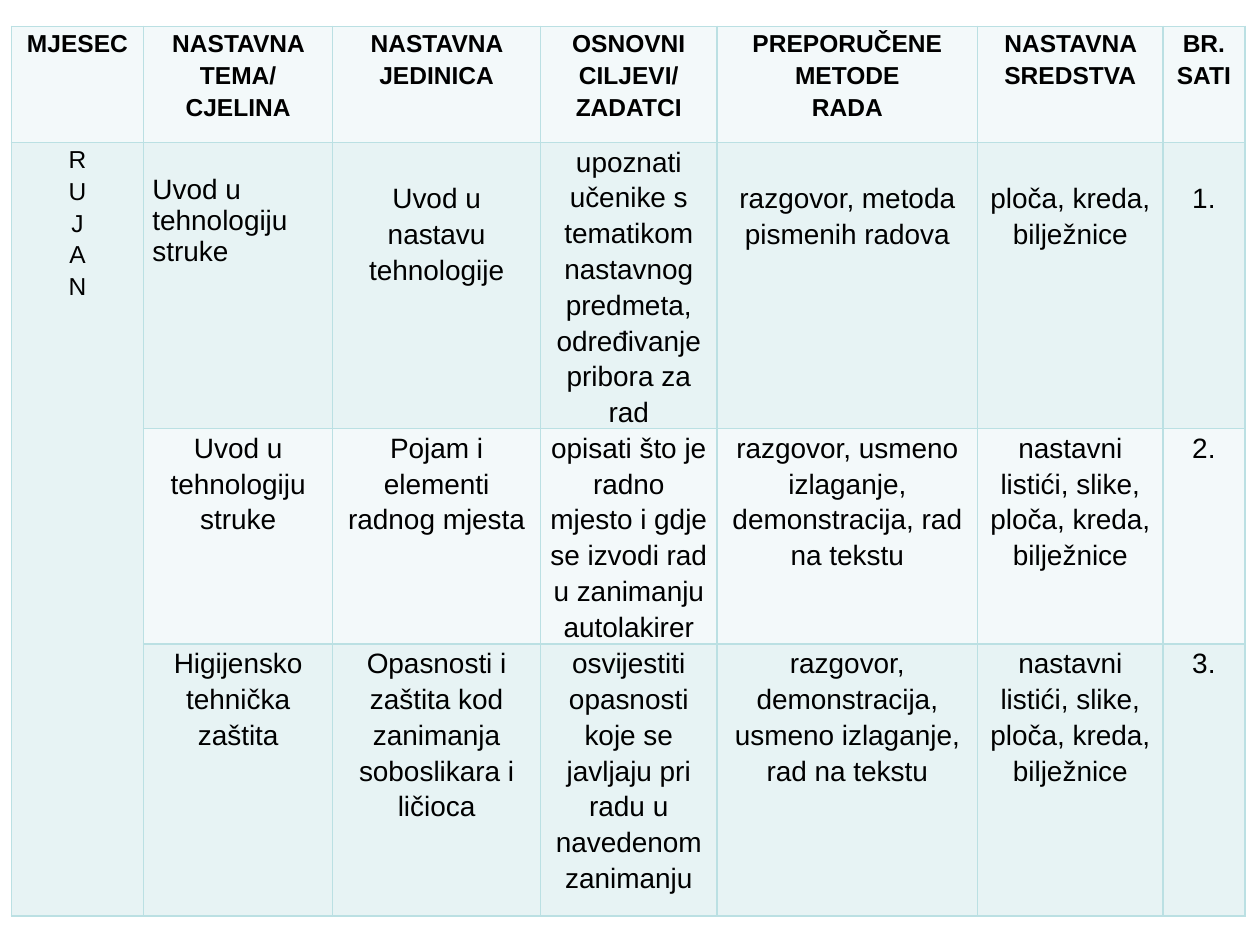
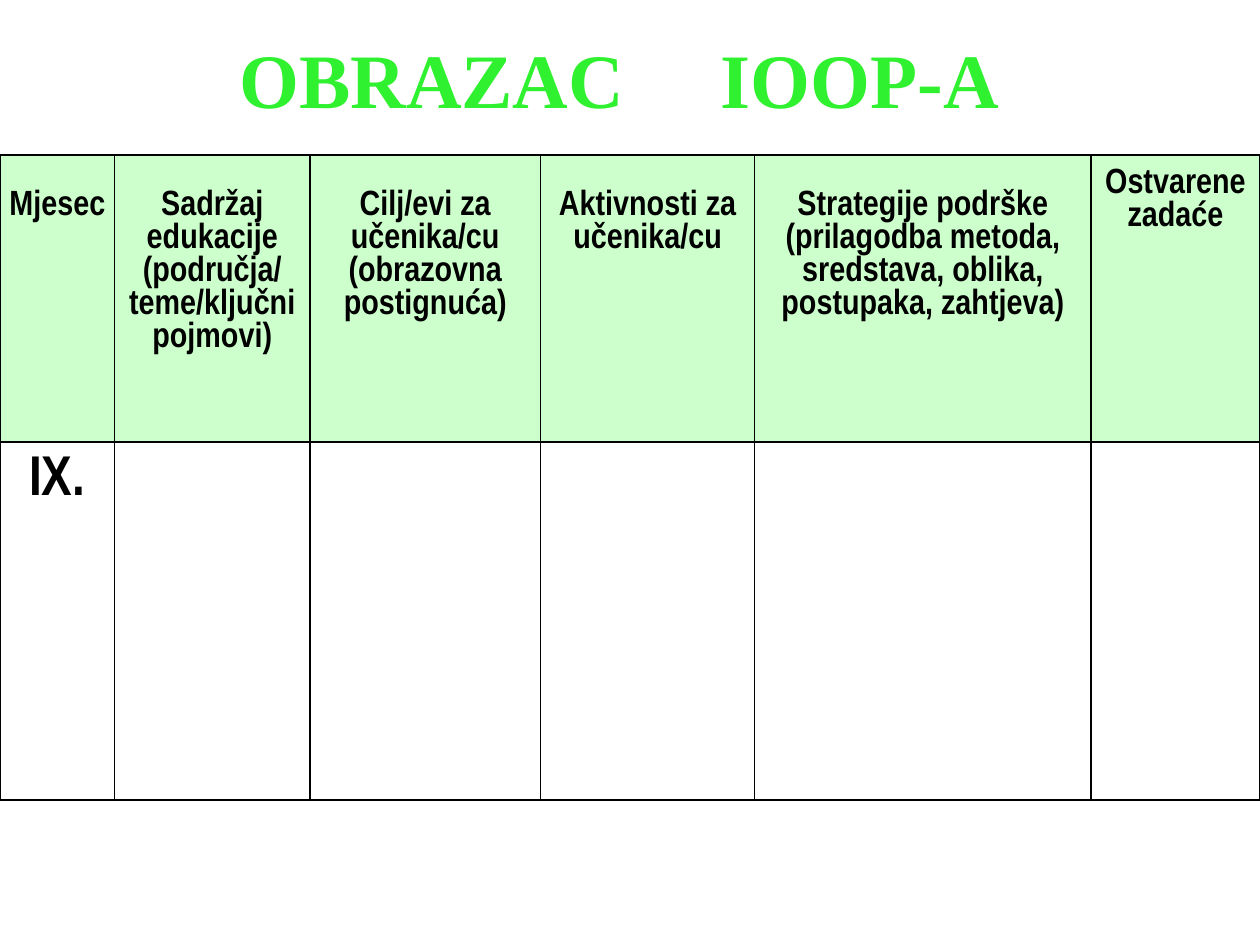
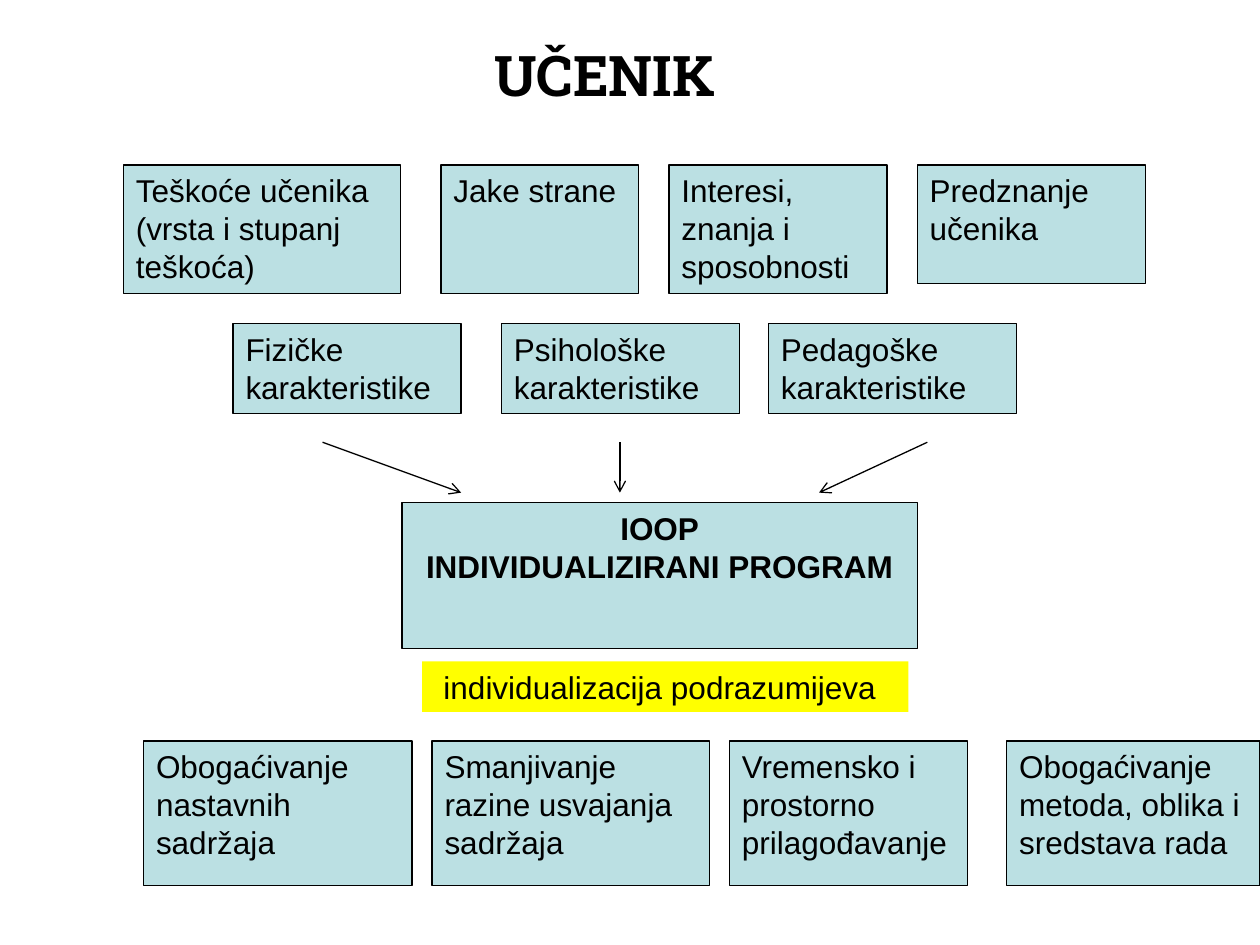
from dataclasses import dataclass

from lxml.etree import SubElement as Sub
from pptx import Presentation
from pptx.dml.color import RGBColor as Rgb
from pptx.enum.shapes import MSO_CONNECTOR as Link, MSO_SHAPE as Shape
from pptx.enum.text import MSO_ANCHOR as Anchor, MSO_AUTO_SIZE as Fit, PP_ALIGN as Align
from pptx.oxml.ns import qn
from pptx.util import Inches, Pt


@dataclass(frozen=True)
class Theme:
    ink: str = "000000"
    white: str = "FFFFFF"
    teal: str = "BBE0E3"
    pale: str = "F3F9FA"
    mist: str = "E7F3F4"
    mint: str = "CCFFCC"
    green: str = "2FF12F"
    yellow: str = "FFFF00"
    sans: str = "Arial"
    narrow: str = "Arial Narrow"
    serif: str = "Times New Roman"
    slab: str = "Roboto Slab"
    small: int = 14
    body: int = 16
    label: int = 18
    head: int = 20
    large: int = 32
    huge: int = 44


T = Theme()
COLS, ROWS = 100, 75
TITLE_ONLY, BLANK = 5, 6

PLAN_COLS = (10.5, 15, 16.5, 14, 20.7, 14.7, 6.5)
PLAN_ROWS = (9.2, 22.7, 17.1, 21.6)
PLAN = (
    ("MJESEC", "NASTAVNA TEMA/\nCJELINA", "NASTAVNA JEDINICA",
     "OSNOVNI CILJEVI/\nZADATCI", "PREPORUČENE METODE\nRADA",
     "NASTAVNA SREDSTVA", "BR. SATI"),
    ("R\nU\nJ\nA\nN", "Uvod u tehnologiju struke",
     "Uvod u nastavu tehnologije",
     "upoznati učenike s tematikom nastavnog predmeta, određivanje pribora za rad",
     "razgovor, metoda pismenih radova", "ploča, kreda, bilježnice", "1."),
    ("", "Uvod u tehnologiju struke", "Pojam i elementi radnog mjesta",
     "opisati što je radno mjesto i gdje se izvodi rad u zanimanju autolakirer",
     "razgovor, usmeno izlaganje, demonstracija, rad na tekstu",
     "nastavni listići, slike, ploča, kreda, bilježnice", "2."),
    ("", "Higijensko tehnička zaštita",
     "Opasnosti i zaštita kod zanimanja soboslikara i ličioca",
     "osvijestiti opasnosti koje se javljaju pri radu u navedenom zanimanju",
     "razgovor, demonstracija, usmeno izlaganje, rad na tekstu",
     "nastavni listići, slike, ploča, kreda, bilježnice", "3."),
)

FORM_COLS = (9.1, 15.5, 18.3, 17, 26.7, 13.4)
FORM_ROWS = (22.8, 28.4)
FORM = (
    ("Mjesec", "Sadržaj edukacije\n(područja/ teme/ključni pojmovi)",
     "Cilj/evi za učenika/cu\n(obrazovna postignuća)",
     "Aktivnosti za učenika/cu",
     "Strategije podrške\n(prilagodba metoda, sredstava, oblika, postupaka, zahtjeva)",
     "Ostvarene zadaće"),
    ("IX.", "", "", "", "", ""),
)

# Each box: text, left, width, height
TRAITS = (
    ("Teškoće učenika (vrsta i stupanj teškoća)", 9.8, 22, 10.2),
    ("Jake strane", 35, 15.7, 10.2),
    ("Interesi, znanja i sposobnosti", 53.1, 17.3, 10.2),
    ("Predznanje učenika", 72.8, 18.1, 9.4),
)
SIDES = (
    ("Fizičke karakteristike", 18.5, 18.1, 7.1),
    ("Psihološke karakteristike", 39.8, 18.9, 7.1),
    ("Pedagoške karakteristike", 61, 19.7, 7.1),
)
STEPS = (
    ("Obogaćivanje nastavnih sadržaja", 11.4, 21.3, 11.5),
    ("Smanjivanje razine usvajanja sadržaja", 34.3, 22, 11.5),
    ("Vremensko i prostorno prilagođavanje", 57.9, 18.9, 11.5),
    ("Obogaćivanje metoda, oblika i sredstava rada", 79.9, 20.1, 11.5),
)
ARROWS = ((25.6, 36.6), (49.2, 49.2), (73.6, 65))


def grid(*steps):
    """Turn grid steps into lengths; columns and rows are equally wide."""
    return [Inches(step * 10 / COLS) for step in steps]


def write(frame, text, size=T.label, font=T.sans, color=T.ink, bold=False,
          align=Align.LEFT, spacing=1.0):
    """Fill a text frame, one paragraph for each line of text."""
    frame.word_wrap = True
    for i, line in enumerate(text.split("\n")):
        para = frame.paragraphs[0] if i == 0 else frame.add_paragraph()
        para.alignment, para.line_spacing = align, spacing
        run = para.add_run()
        run.text = line
        run.font.size, run.font.name, run.font.bold = Pt(size), font, bold
        run.font.color.rgb = Rgb.from_string(color)


def pad(item, left, top, right, bottom):
    (item.margin_left, item.margin_top,
     item.margin_right, item.margin_bottom) = grid(left, top, right, bottom)


def add_title(slide, place, text, **fmt):
    title = slide.shapes.title
    title.left, title.top, title.width, title.height = grid(*place)
    frame = title.text_frame
    frame.auto_size, frame.vertical_anchor = Fit.NONE, Anchor.MIDDLE
    write(frame, text, bold=True, align=Align.CENTER, **fmt)
    return frame


def add_box(slide, place, text, fill=T.teal, line=T.ink, **fmt):
    box = slide.shapes.add_shape(Shape.RECTANGLE, *grid(*place))
    box.shadow.inherit = False
    box.fill.solid()
    box.fill.fore_color.rgb = Rgb.from_string(fill)
    if line:
        box.line.color.rgb = Rgb.from_string(line)
        box.line.width = Pt(0.75)
    else:
        box.line.fill.background()
    box.text_frame.vertical_anchor = Anchor.TOP
    write(box.text_frame, text, **fmt)
    return box


def add_row(slide, top, boxes):
    for text, left, width, height in boxes:
        add_box(slide, (left, top, width, height), text)


def add_arrow(slide, start, end):
    arrow = slide.shapes.add_connector(Link.STRAIGHT, *grid(*start, *end))
    arrow.line.color.rgb = Rgb.from_string(T.ink)
    arrow.line.width = Pt(0.75)
    Sub(arrow.line._get_or_add_ln(), qn("a:tailEnd"), type="arrow")
    Sub(arrow._element.spPr, qn("a:effectLst"))


def frame_cell(cell, fill, edge):
    """Draw all four borders, then the fill."""
    props = cell._tc.get_or_add_tcPr()
    for side in ("lnL", "lnR", "lnT", "lnB"):
        line = Sub(props, qn(f"a:{side}"), w=str(Pt(1)))
        Sub(Sub(line, qn("a:solidFill")), qn("a:srgbClr"), val=edge)
    cell.fill.solid()
    cell.fill.fore_color.rgb = Rgb.from_string(fill)


def add_table(slide, left, top, cols, rows, data, fills, edge, inset, style):
    """style(row, col) gives the top margin of a cell and its text format."""
    place = grid(left, top, sum(cols), sum(rows))
    table = slide.shapes.add_table(len(rows), len(cols), *place).table
    table.first_row = table.horz_banding = False
    for column, width in zip(table.columns, grid(*cols)):
        column.width = width
    for row, height in zip(table.rows, grid(*rows)):
        row.height = height
    for r, line in enumerate(data):
        for c, text in enumerate(line):
            cell = table.cell(r, c)
            frame_cell(cell, fills[r], edge)
            drop, fmt = style(r, c)
            pad(cell, inset, drop, inset, 0)
            if text:
                write(cell.text_frame, text, **fmt)
    return table


def plan_style(row, col):
    fmt = dict(size=T.body, align=Align.CENTER, spacing=1.15)
    if row == 0 or col == 0:
        fmt.update(size=T.small, bold=row == 0)
    elif (row, col) == (1, 1):
        return 2.5, dict(size=T.body)
    lowered = row == 1 and col not in (0, 3)
    return (2.9 if lowered else 0), fmt


def form_style(row, col):
    fmt = dict(size=T.large if row else T.head, font=T.narrow, bold=True,
               align=Align.CENTER)
    last = col == len(FORM_COLS) - 1
    return (1 if row or last else 2.8), fmt


def plan_slide(slide):
    table = add_table(slide, 0.9, 2.1, PLAN_COLS, PLAN_ROWS, PLAN,
                      (T.pale, T.mist, T.pale, T.mist), T.teal, 0.7, plan_style)
    table.cell(1, 0).merge(table.cell(len(PLAN) - 1, 0))


def form_slide(slide):
    frame = add_title(slide, (2.7, 0, 92.9, 12.3), "OBRAZAC IOOP-A",
                      size=T.huge, font=T.serif, color=T.green)
    para = frame.paragraphs[0]
    first, rest = para.runs[0].text.split(" ")
    para.clear()
    for part in (first, " ", rest):
        run = para.add_run()
        run.text = part
        run.font.size, run.font.name, run.font.bold = Pt(T.huge), T.serif, True
        run.font.color.rgb = Rgb.from_string(T.green)
        if part == " ":
            run._r.get_or_add_rPr().set("spc", str(T.huge * 100))
    add_table(slide, 0, 12.3, FORM_COLS, FORM_ROWS, FORM,
              (T.mint, T.white), T.ink, 0.5, form_style)


def pupil_slide(slide):
    frame = add_title(slide, (0, 0, 86.2, 12.5), "UČENIK",
                      size=T.large, font=T.slab)
    pad(frame, 10.8, 3.1, 1, 3.9)
    add_row(slide, 13.1, TRAITS)
    add_row(slide, 25.7, SIDES)
    for start, end in ARROWS:
        add_arrow(slide, (start, 35.1), (end, 39.1))
    add_box(slide, (31.9, 39.9, 40.9, 11.6), "IOOP\nINDIVIDUALIZIRANI PROGRAM",
            bold=True, align=Align.CENTER)
    note = add_box(slide, (33.5, 52.5, 38.6, 4), "individualizacija podrazumijeva",
                   fill=T.yellow, line=None)
    pad(note.text_frame, 1.7, 0.5, 1, 0.5)
    add_row(slide, 58.8, STEPS)


def main():
    deck = Presentation()
    deck.slide_width, deck.slide_height = grid(COLS, ROWS)
    for draw, layout in ((plan_slide, BLANK), (form_slide, TITLE_ONLY),
                         (pupil_slide, TITLE_ONLY)):
        draw(deck.slides.add_slide(deck.slide_layouts[layout]))
    deck.save("out.pptx")


if __name__ == "__main__":
    main()
